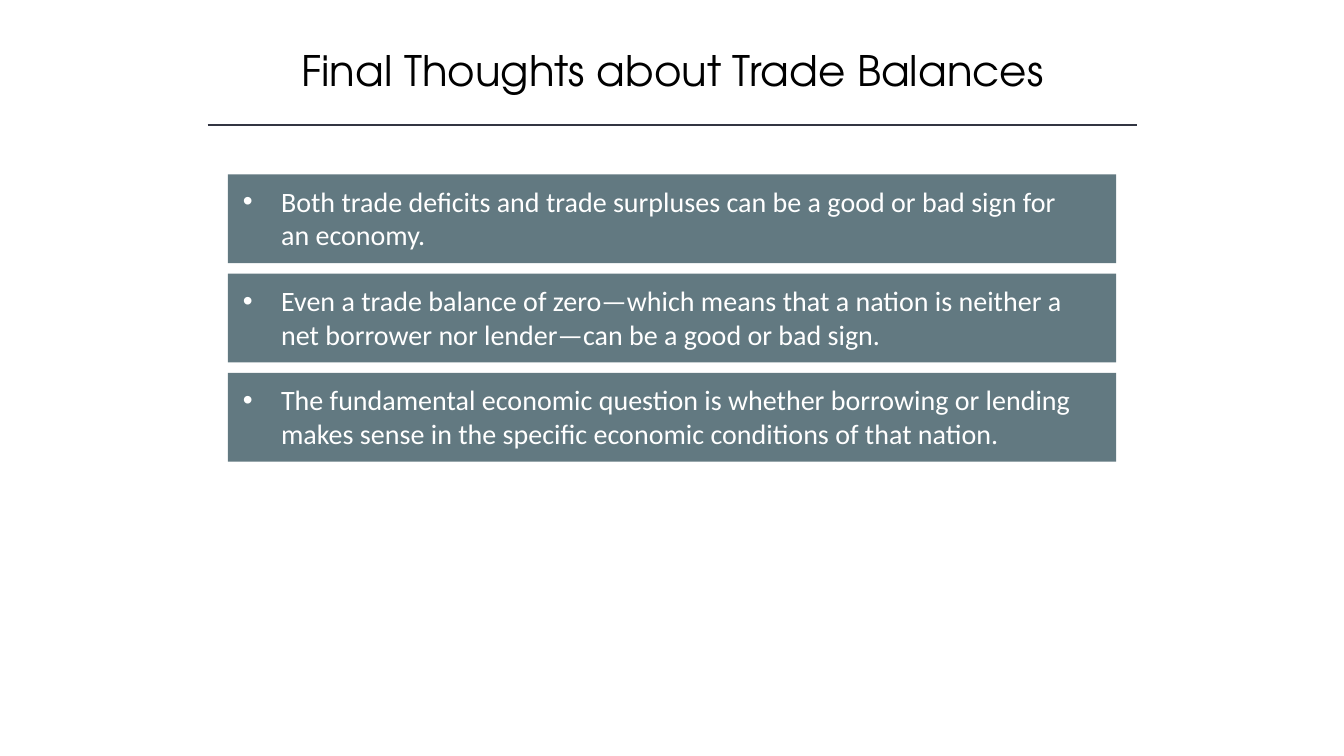
from lxml.etree import SubElement
from pptx import Presentation
from pptx.dml.color import RGBColor
from pptx.enum.shapes import MSO_CONNECTOR, MSO_SHAPE
from pptx.enum.text import MSO_ANCHOR, MSO_AUTO_SIZE, PP_ALIGN
from pptx.oxml.ns import qn
from pptx.util import Inches, Pt

TITLE = "Final Thoughts about Trade Balances"
THOUGHTS = [
    "Both trade deficits and trade surpluses can be a good or bad sign for an economy.",
    "Even a trade balance of zero—which means that a nation is neither a net borrower nor lender—can be a good or bad sign.",
    "The fundamental economic question is whether borrowing or lending makes sense in the specific economic conditions of that nation.",
]

THEME = {
    "title": {"name": "TeX Gyre Adventor", "size": Pt(30), "color": "000000"},
    "body": {"name": "Calibri", "size": Pt(20), "color": "FFFFFF"},
    "panel": "627981",
    "rule": "323542",
}
FRAME = {
    "word_wrap": True,
    "margin_left": Inches(0.1),
    "margin_right": Inches(0.1),
    "margin_top": Inches(0.05),
    "margin_bottom": Inches(0.05),
    "vertical_anchor": MSO_ANCHOR.TOP,
}
PANEL_LEFT, PANEL_WIDTH, PANEL_HEIGHT = 2.26, 8.81, 0.88
FIRST_TOP, LAST_TOP = 1.73, 3.7
INSET, TEXT_WIDTH, TEXT_HEIGHT = 0.05, 8.54, 0.77
INDENT = Inches(0.38)


def write_text(shape, text, style, alignment):
    frame = shape.text_frame
    for name, value in FRAME.items():
        setattr(frame, name, value)
    paragraph = frame.paragraphs[0]
    paragraph.alignment = alignment
    run = paragraph.add_run()
    run.text = text
    for name in ("name", "size"):
        setattr(run.font, name, style[name])
    run.font.color.rgb = RGBColor.from_string(style["color"])
    return paragraph


def add_bullet(paragraph):
    properties = paragraph._p.get_or_add_pPr()
    properties.set("marL", str(INDENT))
    properties.set("indent", str(-INDENT))
    SubElement(properties, qn("a:buFont")).set("typeface", "Arial")
    SubElement(properties, qn("a:buChar")).set("char", "•")


def add_panel(group, left, top, width, height):
    box = [Inches(length) for length in (left, top, width, height)]
    shape = group.shapes.add_shape(MSO_SHAPE.RECTANGLE, *box)
    shape.shadow.inherit = False
    shape.fill.solid()
    shape.fill.fore_color.rgb = RGBColor.from_string(THEME["panel"])
    shape.line.fill.background()
    return shape


def add_thought(slide, text, top):
    group = slide.shapes.add_group_shape()
    add_panel(group, PANEL_LEFT, top, PANEL_WIDTH, PANEL_HEIGHT)
    label = add_panel(group, PANEL_LEFT + INSET, top + INSET, TEXT_WIDTH, TEXT_HEIGHT)
    add_bullet(write_text(label, text, THEME["body"], PP_ALIGN.LEFT))
    label.text_frame.auto_size = MSO_AUTO_SIZE.SHAPE_TO_FIT_TEXT


def main():
    presentation = Presentation()
    presentation.slide_width = Inches(13.33)
    presentation.slide_height = Inches(7.5)
    slide = presentation.slides.add_slide(presentation.slide_layouts[6])

    title = slide.shapes.add_textbox(Inches(1.53), Inches(0.39), Inches(10.28), Inches(0.61))
    write_text(title, TITLE, THEME["title"], PP_ALIGN.CENTER)

    rule = slide.shapes.add_connector(
        MSO_CONNECTOR.STRAIGHT, Inches(2.06), Inches(1.24), Inches(11.28), Inches(1.24)
    )
    rule.line.width = Pt(1)
    rule.line.color.rgb = RGBColor.from_string(THEME["rule"])
    SubElement(rule._element.spPr, qn("a:effectLst"))

    pitch = (LAST_TOP - FIRST_TOP) / (len(THOUGHTS) - 1)
    for index, thought in enumerate(THOUGHTS):
        add_thought(slide, thought, FIRST_TOP + index * pitch)

    presentation.save("out.pptx")


if __name__ == "__main__":
    main()
